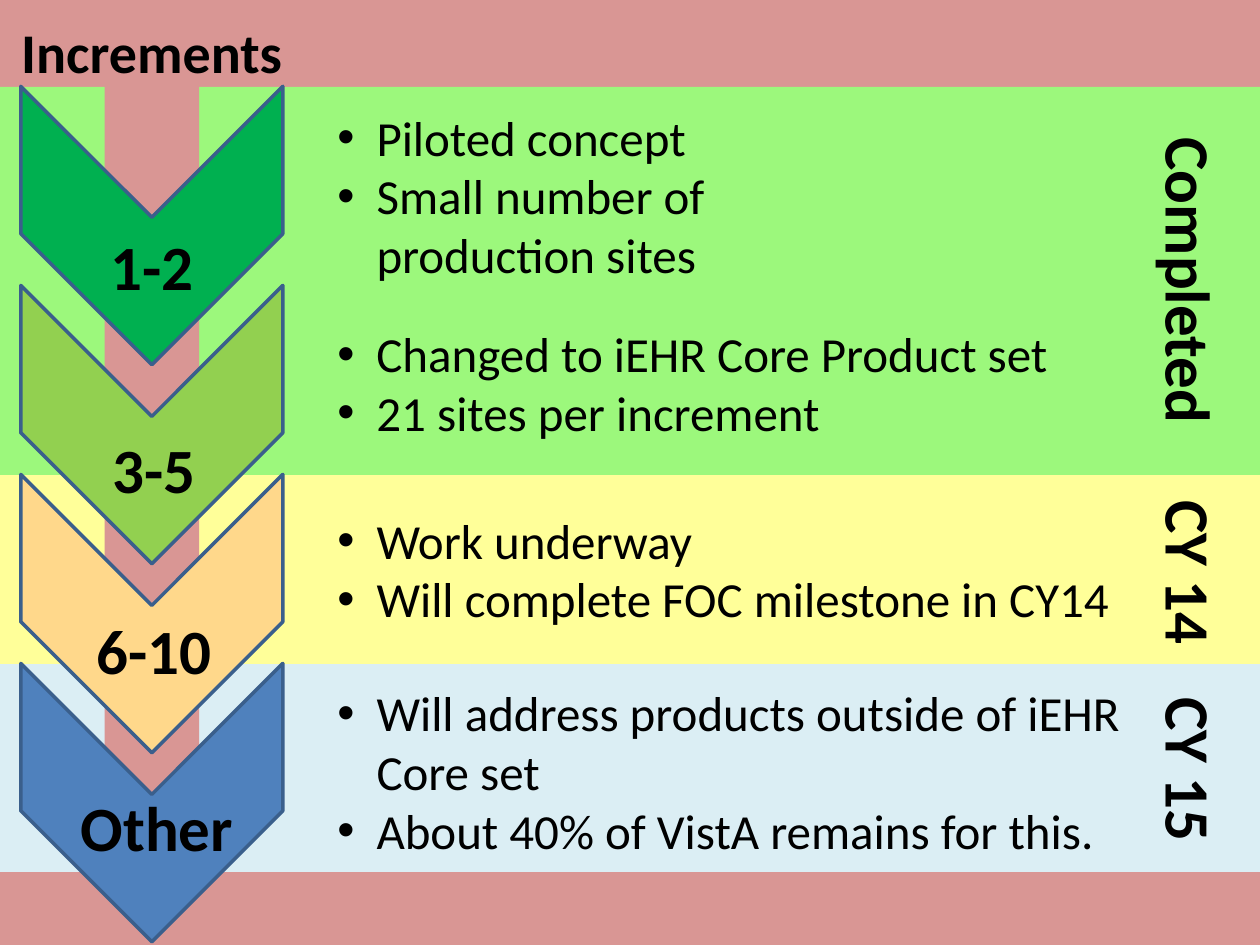
from lxml.etree import SubElement
from pptx import Presentation
from pptx.dml.color import RGBColor as RGB
from pptx.enum.shapes import MSO_SHAPE as Shape
from pptx.enum.text import MSO_AUTO_SIZE as Fit, PP_ALIGN as Align
from pptx.oxml.ns import qn
from pptx.util import Inches, Pt

HUES = {
    "rose": "D99694", "ice": "DBEEF4", "yellow": "FFFF99", "lime": "9CF87C",
    "green": "00B050", "olive": "92D050", "peach": "FFD88B", "blue": "4F81BD",
    "edge": "3A5F8C", "black": "000000",
}

deck = Presentation()
deck.slide_width, deck.slide_height = Inches(10), Inches(7.5)
slide = deck.slides.add_slide(deck.slide_layouts[6])
back = slide.background.fill
back.solid()
back.fore_color.rgb = RGB.from_string(HUES["rose"])


def add_block(kind, box, hue, turn=0, edge=None):
    shape = slide.shapes.add_shape(kind, *map(Inches, box))
    shape.rotation = turn
    shape.shadow.inherit = False
    shape.fill.solid()
    shape.fill.fore_color.rgb = RGB.from_string(HUES[hue])
    if edge:
        shape.line.color.rgb = RGB.from_string(HUES[edge])
        shape.line.width = Pt(2)
    else:
        shape.line.fill.background()


def add_text(lines, box, size, turn=0, list_item=False):
    shape = slide.shapes.add_textbox(*map(Inches, box))
    shape.rotation = turn
    frame = shape.text_frame
    frame.word_wrap = True
    frame.auto_size = Fit.SHAPE_TO_FIT_TEXT
    frame.text = "\n".join(lines)
    for para in frame.paragraphs:
        if list_item:
            props = para._p.get_or_add_pPr()
            props.set("marL", str(Inches(0.31)))
            props.set("indent", str(-Inches(0.31)))
            SubElement(props, qn("a:buFont"), typeface="Arial")
            SubElement(props, qn("a:buChar"), char="•")
        else:
            para.alignment = Align.CENTER
        for run in para.runs:
            run.font.name = "Calibri"
            run.font.size = Pt(size)
            run.font.bold = not list_item
            run.font.color.rgb = RGB.from_string(HUES["black"])


for top, width, height, hue in [
    (5.27, 10.02, 1.65, "ice"),
    (3.77, 10, 1.5, "yellow"),
    (0.69, 10.02, 3.08, "lime"),
]:
    add_block(Shape.RECTANGLE, (0, top, width, height), hue)

add_block(Shape.RECTANGLE, (-1.97, 3.36, 6.35, 0.75), "rose", 270)

for top, hue in [(0.75, "green"), (2.33, "olive"), (3.83, "peach"), (5.33, "blue")]:
    add_block(Shape.CHEVRON, (0.1, top, 2.21, 2.08), hue, 90, "edge")

for label, left, top, size in [
    ("Increments", 0.04, 0.09, 32),
    ("1-2", 0.04, 1.76, 36),
    ("3-5", 0.06, 3.37, 36),
    ("6-10", 0.06, 4.8, 36),
    ("Other", 0.08, 6.21, 36),
]:
    add_text([label], (left, top, 2.33, size / 50), size)

for lines, top, width, height in [
    (["Piloted concept", "Small number of production sites"], 0.8, 3.58, 1.51),
    (["Changed to iEHR Core Product set", "21 sites per increment"], 2.52, 6.17, 1.04),
    (["Work underway", "Will complete FOC milestone in CY14"], 4, 6.51, 1.04),
    (["Will address products outside of iEHR Core set",
      "About 40% of VistA remains for this."], 5.37, 6.51, 1.51),
]:
    add_text(lines, (2.58, top, width, height), 28, list_item=True)

for label, left, top, width in [
    ("Completed", 8.17, 1.87, 2.55),
    ("CY 14", 8.28, 4.19, 2.33),
    ("CY 15", 8.28, 5.75, 2.33),
]:
    add_text([label], (left, top, width, 0.71), 36, 90)

deck.save("out.pptx")
